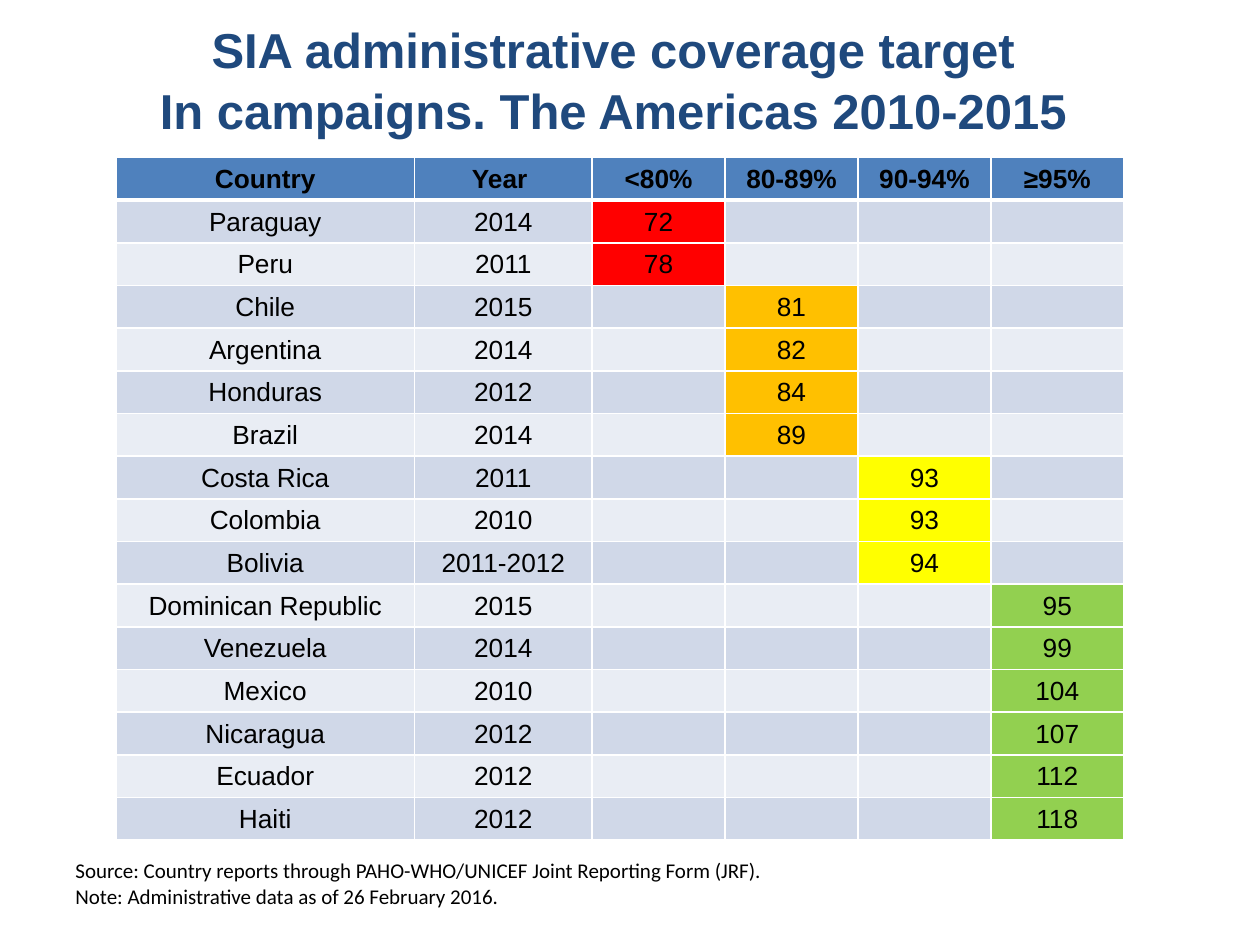
from lxml import etree
from pptx import Presentation
from pptx.dml.color import RGBColor
from pptx.enum.text import MSO_ANCHOR, PP_ALIGN
from pptx.oxml.ns import qn
from pptx.util import Inches, Pt

CENTER, LEFT = PP_ALIGN.CENTER, PP_ALIGN.LEFT
MIDDLE = MSO_ANCHOR.MIDDLE

# Content
TITLE = ["SIA administrative coverage target ", "In campaigns. The Americas 2010-2015 "]
HEADERS = ["Country", "Year ", "<80%", "80-89%", "90-94%", "≥95%"]
COVERAGE = [
    ("Paraguay", "2014", 72), ("Peru", "2011", 78), ("Chile", "2015", 81),
    ("Argentina", "2014", 82), ("Honduras", "2012", 84), ("Brazil", "2014", 89),
    ("Costa Rica", "2011", 93), ("Colombia", "2010", 93), ("Bolivia", "2011-2012", 94),
    ("Dominican Republic", "2015", 95), ("Venezuela", "2014", 99), ("Mexico", "2010", 104),
    ("Nicaragua", "2012", 107), ("Ecuador", "2012", 112), ("Haiti", "2012", 118),
]
NOTES = [
    "Source: Country reports through PAHO-WHO/UNICEF Joint Reporting Form (JRF).",
    "Note: Administrative data as of 26 February 2016.",
]

# Style and layout
LIMITS = [80, 90, 95]  # lower bounds of the second to fourth coverage bands
BAND_FILLS = ["FF0000", "FFC000", "FFFF00", "92D050"]
HEADER_FILL, ROW_FILLS = "4F81BD", ["D0D8E8", "E9EDF4"]
LEFT_EDGE, TABLE_TOP, TABLE_W, TABLE_H = 0.92, 1.25, 8, 5.42
NAME_WIDTHS = [2.37, 1.41]
BAND_W = (TABLE_W - sum(NAME_WIDTHS)) / len(BAND_FILLS)


def rgb(color):
    return RGBColor.from_string(color)


def style(p, size, font, color="000000", bold=False, align=LEFT):
    p.alignment = align
    p.font.size, p.font.name, p.font.bold = Pt(size), font, bold
    p.font.color.rgb = rgb(color)


def add_text(slide, box, lines, spacing=1.0, **look):
    tf = slide.shapes.add_textbox(*map(Inches, box)).text_frame
    tf.word_wrap = True
    tf.text = "\n".join(lines)
    for p in tf.paragraphs:
        style(p, **look)
        p.line_spacing = spacing
    return tf


def add_borders(cell, **widths):
    tcPr = cell._tc.get_or_add_tcPr()
    for side in ("L", "R", "T", "B"):
        ln = etree.SubElement(tcPr, qn(f"a:ln{side}"), w=str(Pt(widths.get(side, 1))))
        fill = etree.SubElement(ln, qn("a:solidFill"))
        etree.SubElement(fill, qn("a:srgbClr"), val="FFFFFF")


def fill_cell(cell, text, color, bold=False, **borders):
    add_borders(cell, **borders)
    cell.fill.solid()
    cell.fill.fore_color.rgb = rgb(color)
    cell.margin_left = cell.margin_right = cell.margin_top = Inches(0.01)
    cell.margin_bottom = 0
    cell.vertical_anchor = MIDDLE
    cell.text = text
    style(cell.text_frame.paragraphs[0], 15, "Arial", bold=bold, align=CENTER)


def main():
    prs = Presentation()
    prs.slide_width, prs.slide_height = Inches(10), Inches(7.5)
    s = prs.slides.add_slide(prs.slide_layouts[6])

    # Title
    add_text(s, (LEFT_EDGE, 0.08, TABLE_W, 1.51), TITLE, spacing=1.05,
             size=28, font="Arial", color="1F497D", bold=True, align=CENTER)

    # Coverage table
    n_rows = len(COVERAGE) + 1
    table = s.shapes.add_table(n_rows, len(HEADERS), *map(
        Inches, (LEFT_EDGE, TABLE_TOP, TABLE_W, TABLE_H))).table
    for col, width in zip(table.columns, NAME_WIDTHS + [BAND_W] * len(BAND_FILLS)):
        col.width = Inches(width)
    for row in table.rows:
        row.height = Inches(TABLE_H / n_rows)

    for c, header in enumerate(HEADERS):
        fill_cell(table.cell(0, c), header, HEADER_FILL, bold=True, B=3)
    for r, (country, year, value) in enumerate(COVERAGE, start=1):
        band = sum(value >= limit for limit in LIMITS)
        texts = [country, year] + [""] * len(BAND_FILLS)
        fills = [ROW_FILLS[(r - 1) % 2]] * len(HEADERS)
        band_col = len(NAME_WIDTHS) + band
        texts[band_col], fills[band_col] = str(value), BAND_FILLS[band]
        for c, (text, color) in enumerate(zip(texts, fills)):
            fill_cell(table.cell(r, c), text, color, T=3 if r == 1 else 1)

    # Source and note
    tf = add_text(s, (0.5, 6.76, 6.25, 0.5), NOTES, size=12, font="Calibri")
    tf.vertical_anchor = MIDDLE

    prs.save("out.pptx")


if __name__ == "__main__":
    main()
